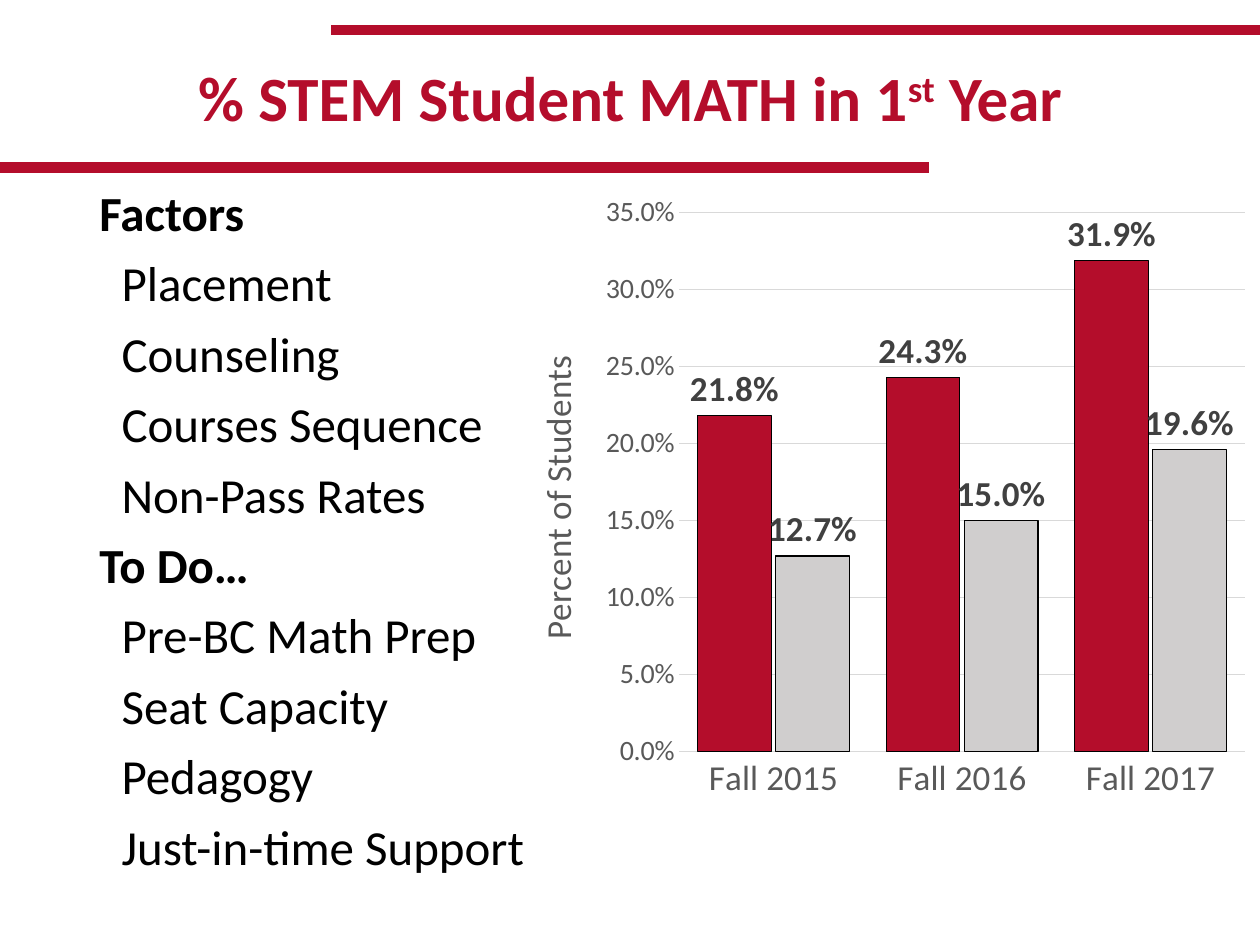
"""Build the slide on STEM students taking math in their first year."""
from lxml import etree
from pptx import Presentation
from pptx.chart.data import CategoryChartData
from pptx.dml.color import RGBColor
from pptx.enum import chart as charts, shapes, text
from pptx.oxml.ns import qn
from pptx.util import Pt

COLORS = {"red": "B40D2B", "gray": "D0CECE", "grid": "D9D9D9",
          "axis": "595959", "label": "404040", "black": "000000"}
OUTLINE = [
    ("Factors", ["Placement", "Counseling", "Courses Sequence", "Non-Pass Rates"]),
    ("To Do…", ["Pre-BC Math Prep", "Seat Capacity", "Pedagogy", "Just-in-time Support"]),
]


def set_font(font, size, color, bold=False):
    font.name = "Calibri"
    font.size = Pt(size)
    font.bold = bold
    font.color.rgb = RGBColor.from_string(COLORS[color])


def set_line(line, color, width=0.75):
    line.color.rgb = RGBColor.from_string(COLORS[color])
    line.width = Pt(width)


deck = Presentation()
deck.slide_width, deck.slide_height = Pt(720), Pt(540)
page = deck.slides.add_slide(deck.slide_layouts[6])

for left, right, top in [(0, 530.64, 95.76), (189.36, 720, 17.28)]:
    rule = page.shapes.add_connector(
        shapes.MSO_CONNECTOR.STRAIGHT, Pt(left), Pt(top), Pt(right), Pt(top))
    set_line(rule.line, "red", 6)
    etree.SubElement(rule._element.spPr, qn("a:effectLst"))

title = page.shapes.add_textbox(Pt(49.68), Pt(28.8), Pt(620.64), Pt(58.32)).text_frame
title.word_wrap = True
title.vertical_anchor = text.MSO_ANCHOR.MIDDLE
para = title.paragraphs[0]
para.alignment = text.PP_ALIGN.CENTER
para.line_spacing = 0.9
set_font(para.font, 36, "red", True)
for words, baseline in [("% STEM Student MATH in 1", 0), ("st", 30000), (" Year", 0)]:
    span = para.add_run()
    span.text = words
    if baseline:
        span._r.get_or_add_rPr().set("baseline", str(baseline))

body = page.shapes.add_textbox(Pt(49.68), Pt(104.4), Pt(620.64), Pt(411.12)).text_frame
body.word_wrap = True
para = body.paragraphs[0]
for heading, items in OUTLINE:
    for words in [heading, *items]:
        if para.text:
            para = body.add_paragraph()
        para.text = words
        para.line_spacing = 0.9
        para.space_before = Pt(10)
        set_font(para.font, 28, "black", words == heading)
        if words != heading:
            para._p.get_or_add_pPr().set("marL", str(Pt(12.7)))

data = CategoryChartData(number_format="0.0%")
data.categories = ["Fall 2015", "Fall 2016", "Fall 2017"]
data.add_series("Series 1", [0.218, 0.243, 0.319])
data.add_series("Series 2", [0.127, 0.15, 0.196])
chart = page.shapes.add_chart(
    charts.XL_CHART_TYPE.COLUMN_CLUSTERED,
    Pt(288), Pt(104.4), Pt(432), Pt(360), data).chart
chart.has_legend = False
chart.has_title = False
set_font(chart.font, 10, "black")

category_axis, value_axis = chart.category_axis, chart.value_axis
for axis, size in [(category_axis, 20), (value_axis, 16)]:
    axis.major_tick_mark = axis.minor_tick_mark = charts.XL_TICK_MARK.NONE
    set_font(axis.tick_labels.font, size, "axis")
set_line(category_axis.format.line, "grid")
value_axis.format.line.fill.background()
set_line(value_axis.major_gridlines.format.line, "grid")
value_axis.minimum_scale, value_axis.maximum_scale = 0, 0.35
value_axis.major_unit = 0.05
value_axis.tick_labels.number_format = "0.0%"
value_axis.tick_labels.number_format_is_linked = False
para = value_axis.axis_title.text_frame.paragraphs[0]
para.text = "Percent of Students"
set_font(para.font, 20, "axis")

plot = chart.plots[0]
plot.gap_width, plot.overlap = 50, -6
plot.vary_by_categories = False
for series, color in zip(plot.series, ["red", "gray"]):
    series.format.fill.solid()
    series.format.fill.fore_color.rgb = RGBColor.from_string(COLORS[color])
    set_line(series.format.line, "black")
    labels = series.data_labels
    labels.show_value = True
    labels.position = charts.XL_LABEL_POSITION.OUTSIDE_END
    labels.number_format = "0.0%"
    labels.number_format_is_linked = False
    set_font(labels.font, 20, "label", True)

deck.save("out.pptx")
